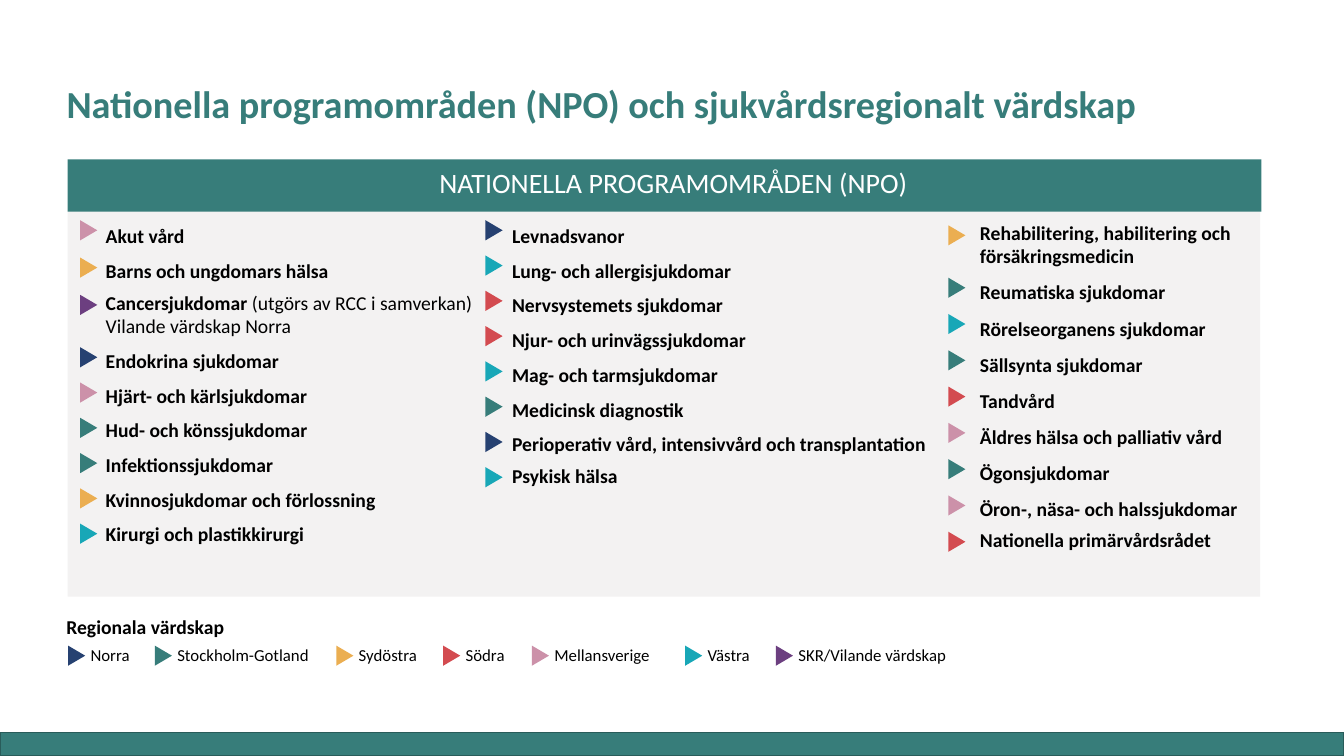
from lxml import etree
from pptx import Presentation, util as u
from pptx.dml.color import RGBColor
from pptx.enum import shapes, text
from pptx.oxml.ns import qn

WIDTH, HEIGHT = 13.33, 7.5
TEAL, BLACK, WHITE = "377D7A", "000000", "FFFFFF"
TITLE = "Nationella programområden (NPO) och sjukvårdsregionalt värdskap"
HEADING = "NATIONELLA PROGRAMOMRÅDEN (NPO)"
REGIONS = {
    "Norra": ("264171", 0.66, 0.6),
    "Stockholm-Gotland": (TEAL, 1.52, 1.52),
    "Sydöstra": ("EBAE51", 3.32, 0.8),
    "Södra": ("D34B50", 4.38, 0.6),
    "Mellansverige": ("CC91A9", 5.26, 1.16),
    "Västra": ("18A7B7", 6.78, 0.64),
    "SKR/Vilande värdskap": ("6C3F80", 7.68, 1.68),
}
ROW, SINGLE = "row", "single"
COLUMNS = [
    {"box": (0.95, 2.06, 3.92, 3.81), "spacing": 24.8, "items": [
        (ROW, "Akut vård", ""),
        (ROW, "Barns och ungdomars hälsa", ""),
        (SINGLE, "Cancersjukdomar ", "(utgörs av RCC i samverkan)"),
        (SINGLE, "", "Vilande värdskap Norra"),
        (ROW, "Endokrina sjukdomar", ""),
        (ROW, "Hjärt- och kärlsjukdomar", ""),
        (ROW, "Hud- och könssjukdomar", ""),
        (ROW, "Infektionssjukdomar", ""),
        (ROW, "Kvinnosjukdomar och förlossning", ""),
        (ROW, "Kirurgi och plastikkirurgi", "")]},
    {"box": (4.98, 2.06, 4.35, 2.88), "spacing": 24.8, "items": [
        (ROW, "Levnadsvanor", ""),
        (ROW, "Lung- och allergisjukdomar", ""),
        (ROW, "Nervsystemets sjukdomar", ""),
        (ROW, "Njur- och urinvägssjukdomar", ""),
        (ROW, "Mag- och tarmsjukdomar", ""),
        (ROW, "Medicinsk diagnostik", ""),
        (ROW, "Perioperativ vård, intensivvård och transplantation", ""),
        (SINGLE, "Psykisk hälsa", "")]},
    {"box": (9.62, 2.14, 2.92, 3.44), "spacing": 25.8, "items": [
        (SINGLE, "Rehabilitering, habilitering och försäkringsmedicin", ""),
        (ROW, "Reumatiska sjukdomar", ""),
        (ROW, "Rörelseorganens sjukdomar", ""),
        (ROW, "Sällsynta sjukdomar", ""),
        (ROW, "Tandvård", ""),
        (ROW, "Äldres hälsa och palliativ vård", ""),
        (ROW, "Ögonsjukdomar", ""),
        (ROW, "Öron-, näsa- och halssjukdomar", "")]},
    {"box": (9.62, 5.19, 2.73, 0.34), "spacing": 25.8, "items": [
        (SINGLE, "Nationella primärvårdsrådet", "")]},
]
MARKERS = [
    (0.78, 2.2, 0.37, ["Mellansverige", "Sydöstra", "SKR/Vilande värdskap"]),
    (0.78, 3.46, 0.35, ["Norra", "Mellansverige", "Stockholm-Gotland",
                        "Stockholm-Gotland", "Sydöstra", "Västra"]),
    (4.8, 2.2, 0.35, ["Norra", "Västra", "Södra", "Södra", "Västra",
                      "Stockholm-Gotland", "Norra", "Västra"]),
    (9.39, 2.25, 0.52, ["Sydöstra"]),
    (9.39, 2.77, 0.36, ["Stockholm-Gotland", "Västra", "Stockholm-Gotland", "Södra",
                        "Mellansverige", "Stockholm-Gotland", "Mellansverige", "Södra"]),
]

presentation = Presentation()
presentation.slide_width, presentation.slide_height = u.Inches(WIDTH), u.Inches(HEIGHT)
slide = presentation.slides.add_slide(presentation.slide_layouts[5])


def colour(value):
    return RGBColor.from_string(value)


def inches(*lengths):
    return [u.Inches(length) for length in lengths]


def add_run(paragraph, words, size=14, color=BLACK, bold=False):
    run = paragraph.add_run()
    run.text = words
    run.font.name, run.font.size = "Calibri", u.Pt(size)
    run.font.bold, run.font.color.rgb = bold, colour(color)


def add_text(box, words, align=None, wrap=True, **style):
    frame = slide.shapes.add_textbox(*inches(*box)).text_frame
    frame.word_wrap = wrap
    frame.paragraphs[0].alignment = align
    add_run(frame.paragraphs[0], words, **style)


def add_items(box, spacing, items):
    frame = slide.shapes.add_textbox(*inches(*box)).text_frame
    frame.word_wrap = True
    following = [kind for kind, _, _ in items[1:]] + [ROW]
    for index, (kind, bold, regular) in enumerate(items):
        paragraph = frame.paragraphs[0] if index == 0 else frame.add_paragraph()
        if kind == ROW:
            paragraph.line_spacing = u.Pt(spacing)
            if following[index] == SINGLE:
                paragraph.space_after = u.Pt(6)
        for words, is_bold in ((bold, True), (regular, False)):
            if words:
                add_run(paragraph, words, bold=is_bold)


def add_block(kind, box, fill, line=None, alpha=None):
    shape = slide.shapes.add_shape(kind, *inches(*box))
    shape.shadow.inherit = False
    shape.fill.solid()
    shape.fill.fore_color.rgb = colour(fill)
    if alpha:
        element = shape._element.spPr.find(".//" + qn("a:srgbClr"))
        etree.SubElement(element, qn("a:alpha")).set("val", str(alpha * 1000))
    if line:
        shape.line.color.rgb, shape.line.width = colour(line), u.Pt(1)
    else:
        shape.line.fill.background()
    return shape


def add_marker(left, top, region):
    box = (left, top, 0.2, 0.17)
    add_block(shapes.MSO_SHAPE.ISOSCELES_TRIANGLE, box, REGIONS[region][0]).rotation = 90


rectangle = shapes.MSO_SHAPE.RECTANGLE
add_block(rectangle, (0, HEIGHT - 0.23, WIDTH, 0.23), TEAL, line="295C5A")
add_block(rectangle, (0.67, 2.09, 11.83, 3.83), "D0CECE", alpha=25)
add_block(rectangle, (0.67, 1.58, 11.84, 0.52), TEAL)
add_text((0.68, 1.59, 12, 0.77), HEADING, align=text.PP_ALIGN.CENTER, size=20, color=WHITE)
for column in COLUMNS:
    add_items(**column)
for left, top, pitch, regions in MARKERS:
    for row, region in enumerate(regions):
        add_marker(left, top + row * pitch, region)

add_text((0.56, 6.05, 12.57, 0.34), "Regionala värdskap", bold=True)
for region, (_, left, width) in REGIONS.items():
    add_marker(left, 6.42, region)
    add_text((left + 0.14, 6.35, width, 0.3), region, wrap=False, size=12)

title = slide.shapes.title
title.left, title.top, title.width, title.height = inches(0.56, 0.64, 12.32, 0.67)
title.text_frame.auto_size = text.MSO_AUTO_SIZE.NONE
title.text_frame.vertical_anchor = text.MSO_ANCHOR.BOTTOM
heading = title.text_frame.paragraphs[0]
heading.alignment, heading.line_spacing = text.PP_ALIGN.LEFT, 0.9
add_run(heading, TITLE, size=27.3, color=TEAL, bold=True)

presentation.save("out.pptx")
